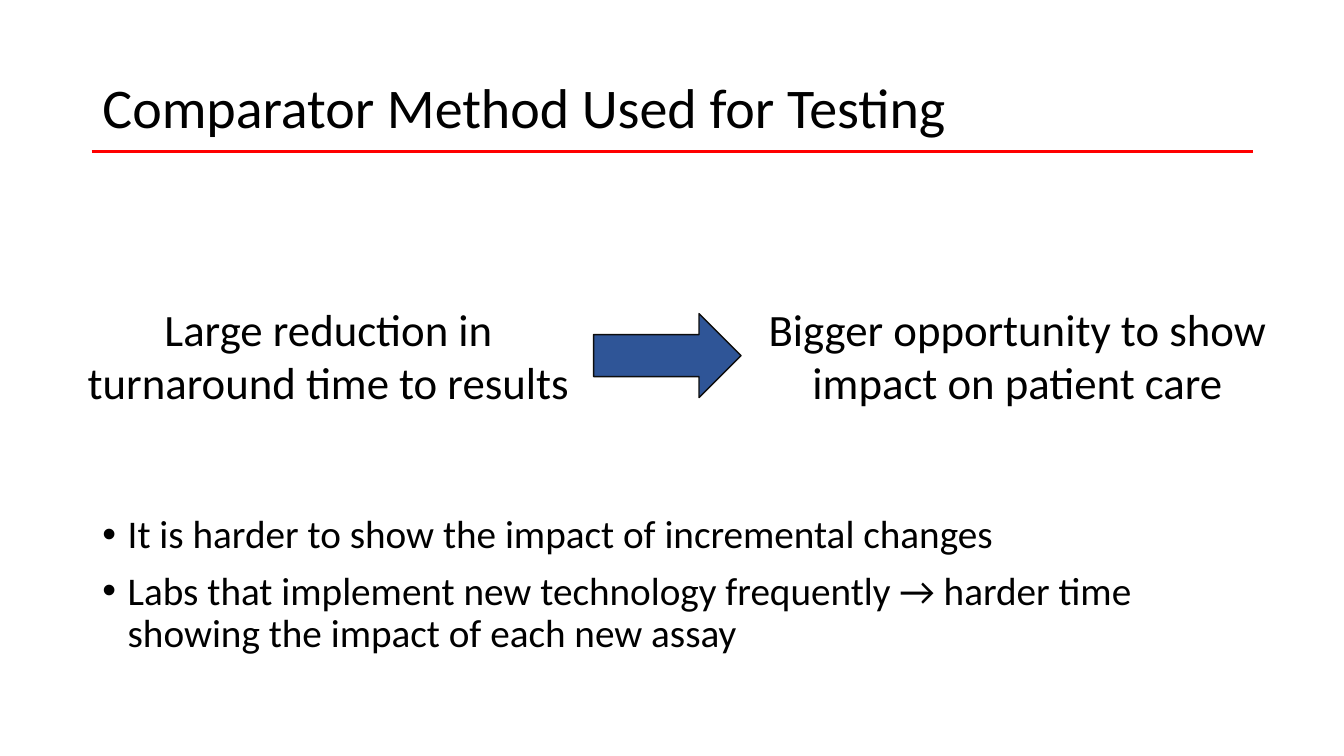
from pptx import Presentation
from pptx.dml.color import RGBColor
from pptx.enum.shapes import MSO_CONNECTOR, MSO_SHAPE
from pptx.enum.text import MSO_ANCHOR, MSO_AUTO_SIZE, PP_ALIGN
from pptx.oxml.ns import qn
from pptx.util import Pt

FONT = "Calibri"
BLACK = "000000"
TITLE = "Comparator Method Used for Testing"
STATEMENT_TOP, STATEMENT_HEIGHT = 211.7, 85
STATEMENTS = [
    ("Large reduction in turnaround time to results", 33.8, 401.8),
    ("Bigger opportunity to show impact on patient care", 535, 383.8),
]
POINTS = [
    "It is harder to show the impact of incremental changes",
    "Labs that implement new technology frequently → harder time "
    "showing the impact of each new assay",
]


def color(hex_string):
    """Return the colour for a hex string."""
    return RGBColor.from_string(hex_string)


def place(shape, left, top, width, height):
    """Position and size a shape in points."""
    shape.left, shape.top = Pt(left), Pt(top)
    shape.width, shape.height = Pt(width), Pt(height)


def format_paragraph(paragraph, size, alignment, line_spacing=1.0, space_before=0):
    """Format a paragraph and its runs."""
    paragraph.alignment = alignment
    paragraph.line_spacing = line_spacing
    paragraph.space_before = Pt(space_before)
    for run in paragraph.runs:
        run.font.name = FONT
        run.font.size = Pt(size)
        run.font.color.rgb = color(BLACK)


def fill_title(title):
    """Write the slide title."""
    place(title, 66, 21, 828, 115)
    frame = title.text_frame
    frame.text = TITLE
    frame.vertical_anchor = MSO_ANCHOR.MIDDLE
    frame.auto_size = MSO_AUTO_SIZE.NONE
    format_paragraph(frame.paragraphs[0], 40, PP_ALIGN.LEFT, 0.9)


def fill_points(body):
    """Write the bulleted list."""
    place(body, 66, 364.3, 828, 160.6)
    frame = body.text_frame
    frame.text = "\n".join(POINTS)
    frame.auto_size = MSO_AUTO_SIZE.NONE
    for paragraph in frame.paragraphs:
        format_paragraph(paragraph, 28, PP_ALIGN.LEFT, 0.9, 10)
        properties = paragraph._p.get_or_add_pPr()
        properties.set("marL", str(Pt(18)))
        properties.set("indent", str(Pt(-18)))
        properties.makeelement(qn("a:buChar"), {})
        bullet = properties.makeelement(qn("a:buChar"), {"char": "•"})
        properties.append(bullet)


def add_statement(slide, text, left, width):
    """Add a centred statement beside the arrow."""
    box = slide.shapes.add_textbox(
        Pt(left), Pt(STATEMENT_TOP), Pt(width), Pt(STATEMENT_HEIGHT))
    frame = box.text_frame
    frame.word_wrap = True
    frame.auto_size = MSO_AUTO_SIZE.SHAPE_TO_FIT_TEXT
    frame.text = text
    format_paragraph(frame.paragraphs[0], 32, PP_ALIGN.CENTER)


def add_arrow(slide):
    """Add the block arrow between the statements."""
    arrow = slide.shapes.add_shape(
        MSO_SHAPE.RIGHT_ARROW, Pt(424), Pt(224), Pt(105.3), Pt(60))
    arrow.shadow.inherit = False
    arrow.fill.solid()
    arrow.fill.fore_color.rgb = color("2F5597")
    arrow.line.color.rgb = color("0D0D0D")
    arrow.line.width = Pt(1)


def add_title_rule(slide):
    """Add the red rule under the title."""
    rule = slide.shapes.add_connector(
        MSO_CONNECTOR.STRAIGHT, Pt(65.5), Pt(108.5), Pt(895), Pt(108.5))
    rule.line.color.rgb = color("FF0000")
    rule.line.width = Pt(2.25)
    properties = rule._element.spPr
    properties.append(properties.makeelement(qn("a:effectLst"), {}))


def main():
    """Build and save the slide."""
    presentation = Presentation()
    presentation.slide_width, presentation.slide_height = Pt(960), Pt(540)
    slide = presentation.slides.add_slide(presentation.slide_layouts[1])
    fill_title(slide.shapes.title)
    fill_points(slide.placeholders[1])
    for text, left, width in STATEMENTS:
        add_statement(slide, text, left, width)
    add_arrow(slide)
    add_title_rule(slide)
    presentation.save("out.pptx")


if __name__ == "__main__":
    main()
